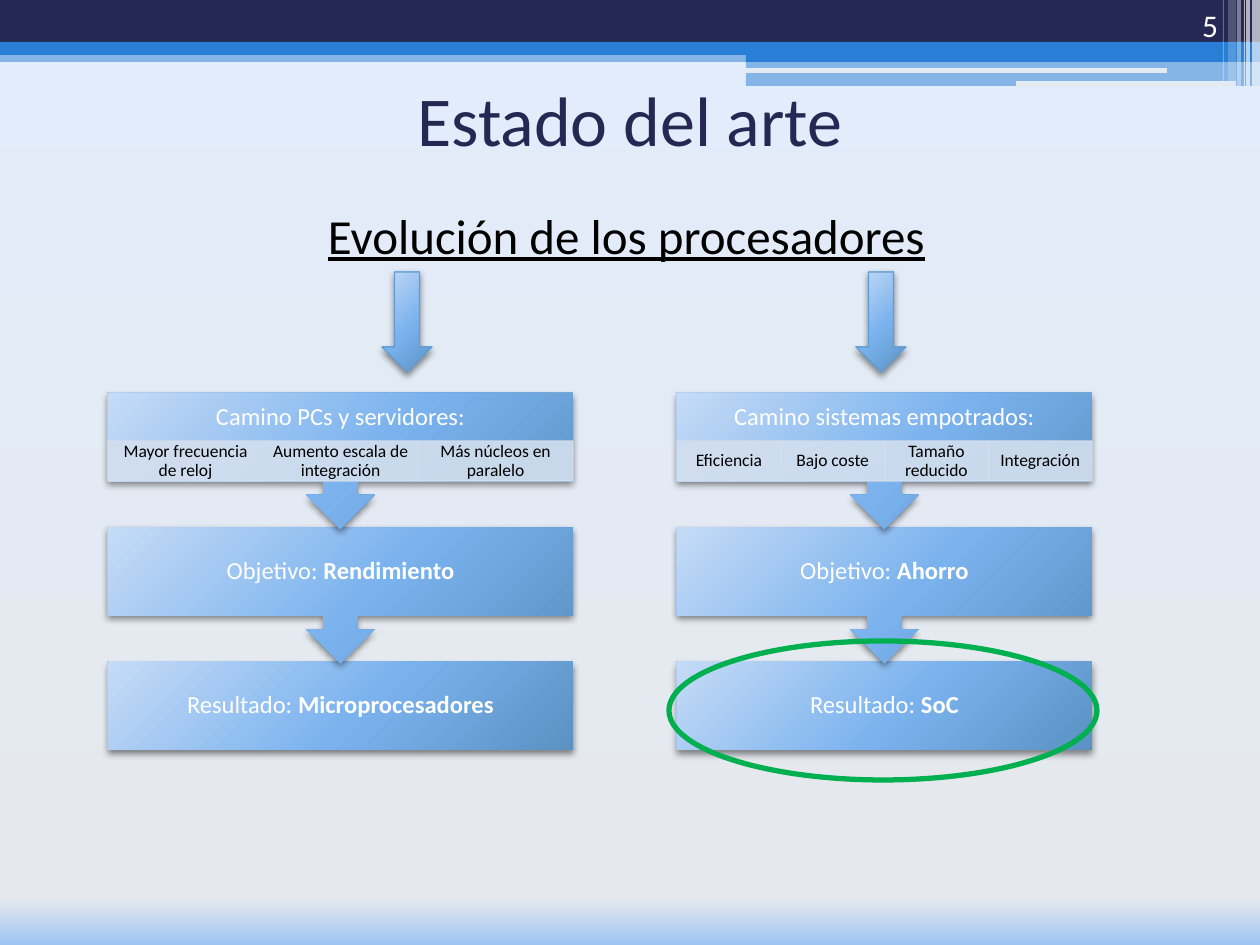
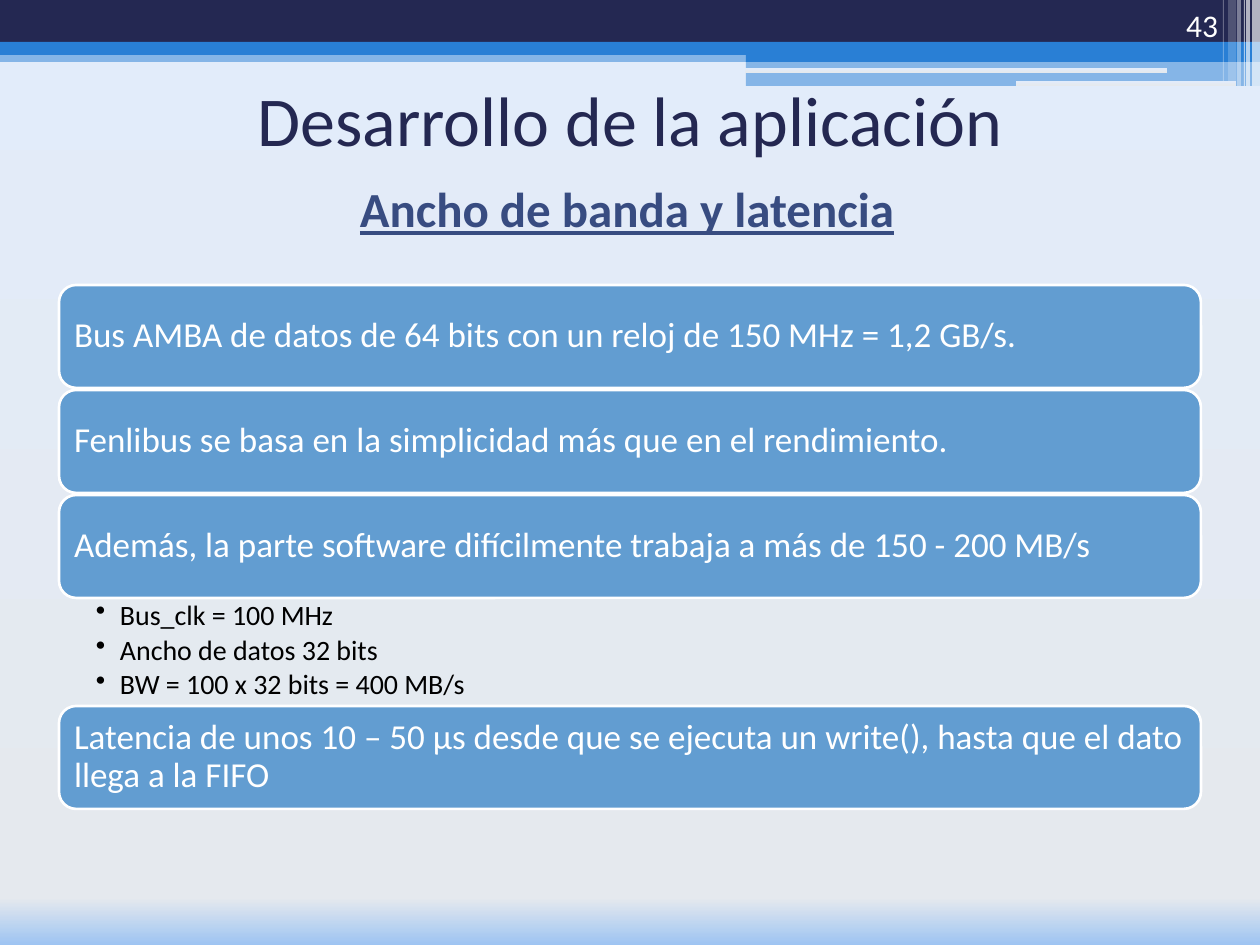
import pptx
import pptx.dml.color
import pptx.enum.shapes
import pptx.enum.text
import pptx.oxml
import pptx.oxml.ns
import pptx.util

RGB = pptx.dml.color.RGBColor
SHAPE = pptx.enum.shapes.MSO_SHAPE
ALIGN = pptx.enum.text.PP_ALIGN
ANCHOR = pptx.enum.text.MSO_ANCHOR
qn = pptx.oxml.ns.qn

EMU_PER_PX = 914400 / 126
SLIDE_W, SLIDE_H = 1260, 945
FONT = "Calibri"

NAVY = RGB(0x24, 0x28, 0x52)
BLUE = RGB(0x29, 0x7F, 0xD5)
SKY = RGB(0x62, 0x9D, 0xD1)
INDIGO = RGB(0x38, 0x4C, 0x81)
PALE = RGB(0xD3, 0xDF, 0xEE)
GREEN = RGB(0x00, 0xB0, 0x50)
WHITE = RGB(0xFF, 0xFF, 0xFF)
BLACK = RGB(0x00, 0x00, 0x00)

PAGE_STOPS = [(0, RGB(0x9E, 0xC4, 0xF2)), (5, RGB(0xE5, 0xE9, 0xEE)),
              (100, RGB(0xE2, 0xEC, 0xFA))]
PAGE_SHADE = '<a:lin ang="16200000" scaled="0"/>'
GLOSS_STOPS = [(0, RGB(0xC5, 0xDB, 0xF6)), (55, RGB(0x7A, 0xB2, 0xEE)),
               (100, RGB(0x5B, 0x92, 0xC3))]
GLOSS_SHADE = ('<a:path path="circle"><a:fillToRect l="-40000" t="-90000" '
               'r="140000" b="190000"/></a:path>')


def px(n):
    return pptx.util.Emu(round(n * EMU_PER_PX))


def xml(tag, body):
    return pptx.oxml.parse_xml(f'<a:{tag} {pptx.oxml.ns.nsdecls("a")}>{body}</a:{tag}>')


def set_gradient(parent, stops, shade):
    """Replace the solid fill held by parent with a gradient."""
    marks = "".join(f'<a:gs pos="{pos * 1000}"><a:srgbClr val="{color}"/></a:gs>'
                    for pos, color in stops)
    grad = xml("gradFill", f"<a:gsLst>{marks}</a:gsLst>{shade}")
    parent.replace(parent.find(qn("a:solidFill")), grad)


def set_alpha(parent, percent):
    color = parent.find(qn("a:solidFill")).find(qn("a:srgbClr"))
    color.append(xml("alpha", ""))
    color[-1].set("val", str(percent * 1000))


def add_shape(slide, kind, box, fill=None, alpha=None, line=None, line_pt=0.75):
    sp = slide.shapes.add_shape(kind, *map(px, box))
    sp.shadow.inherit = False
    if fill is None:
        sp.fill.background()
    else:
        sp.fill.solid()
        sp.fill.fore_color.rgb = fill
        if alpha:
            set_alpha(sp.element.spPr, alpha)
    if line is None:
        sp.line.fill.background()
    else:
        sp.line.color.rgb = line
        sp.line.width = pptx.util.Pt(line_pt)
        if alpha:
            set_alpha(sp.element.spPr.find(qn("a:ln")), alpha)
    return sp


def add_glossy(slide, kind, box, line=None):
    """Add a shape with the shaded blue fill and a soft drop shadow."""
    sp = add_shape(slide, kind, box, SKY, line=line)
    set_gradient(sp.element.spPr, GLOSS_STOPS, GLOSS_SHADE)
    sp.element.spPr.find(qn("a:effectLst")).append(xml(
        "outerShdw", '<a:srgbClr val="000000"><a:alpha val="45000"/></a:srgbClr>'))
    shadow = sp.element.spPr.find(qn("a:effectLst"))[0]
    for name, value in (("blurRad", 50800), ("dist", 25400), ("dir", 5400000)):
        shadow.set(name, str(value))
    return sp


def write(sp, *lines, size, color, align=ALIGN.LEFT, anchor=ANCHOR.TOP, bold=False,
          underline=False, bold_tail="", insets=(13, 6, 13, 6), wrap=True,
          spacing=1.0, after=0, bullet_indent=0):
    """Write one paragraph per line; bold_tail ends each in bold."""
    tf = sp.text_frame
    tf.word_wrap = wrap
    tf.vertical_anchor = anchor
    tf.margin_left, tf.margin_top, tf.margin_right, tf.margin_bottom = map(px, insets)
    for i, line in enumerate(lines):
        p = tf.add_paragraph() if i else tf.paragraphs[0]
        p.alignment = align
        p.line_spacing = spacing
        p.space_after = pptx.util.Pt(after)
        if bullet_indent:
            p.level = 1
            pPr = p._p.get_or_add_pPr()
            pPr.set("marL", str(px(bullet_indent)))
            pPr.set("indent", str(px(-bullet_indent)))
            pPr.append(xml("buChar", ""))
            pPr[-1].set("char", "•")
        for text, is_bold in ((line, bold), (bold_tail, True)):
            if text:
                r = p.add_run()
                r.text = text
                r.font.name = FONT
                r.font.size = pptx.util.Pt(size)
                r.font.color.rgb = color
                r.font.bold = is_bold
                r.font.underline = underline


def add_text(slide, box, *lines, **style):
    write(slide.shapes.add_textbox(*map(px, box)), *lines, **style)


def add_header_bands(slide):
    bands = [((0, 50, SLIDE_W, 12), BLUE, 50),
             ((0, 0, SLIDE_W, 43), NAVY, None),
             ((0, 42, SLIDE_W, 13), BLUE, None),
             ((746, 49, 514, 13), BLUE, None),
             ((746, 61, 514, 25), BLUE, 50)]
    for box, color, alpha in bands:
        add_shape(slide, SHAPE.RECTANGLE, box, color, alpha)
    for box in ((745, 68, 422, 5), (1016, 81, 220, 5)):
        sp = add_shape(slide, SHAPE.ROUNDED_RECTANGLE, box, PALE)
        set_gradient(sp.element.spPr, PAGE_STOPS, PAGE_SHADE)
    stripes = [(1252, 8, 86, 65), (1246, 4, 86, 65), (1244, 1, 86, 60),
               (1237, 4, 86, 40), (1228, 8, 81, 20), (1223, 1, 81, 30)]
    for x, w, h, alpha in stripes:
        add_shape(slide, SHAPE.RECTANGLE, (x, 0, w, h), WHITE, alpha)


def add_base_slide(prs, title, number):
    slide = prs.slides.add_slide(prs.slide_layouts[6])
    slide.background.fill.solid()
    slide.background.fill.fore_color.rgb = PALE
    set_gradient(slide.element.xpath(".//p:bgPr")[0], PAGE_STOPS, PAGE_SHADE)
    add_header_bands(slide)
    add_text(slide, (63, 45, 1134, 147), title, size=40, color=NAVY,
             align=ALIGN.CENTER, anchor=ANCHOR.MIDDLE)
    add_text(slide, (1126, 0, 105, 50), number, size=18, color=WHITE,
             align=ALIGN.RIGHT, anchor=ANCHOR.BOTTOM)
    return slide


def add_path_column(slide, box, heading, features, goal, result):
    """Draw three stacked steps, from the heading with its features to the result."""
    x, y, w, h = box
    body_h, callout_h, feature_h = 88, 136, 40
    pitch = (h - body_h) / 2
    steps = [(heading, "", feature_h), ("Objetivo: ", goal, 0), ("Resultado: ", result, 0)]
    for i, (text, tail, reserved) in reversed(list(enumerate(steps))):
        last = i == len(steps) - 1
        kind = SHAPE.RECTANGLE if last else SHAPE.DOWN_ARROW_CALLOUT
        sp = add_glossy(slide, kind, (x, y + i * pitch, w, body_h if last else callout_h))
        write(sp, text, bold_tail=tail, size=14, color=WHITE, align=ALIGN.CENTER,
              anchor=ANCHOR.MIDDLE, spacing=0.9, insets=(14, 14, 14, 14 + reserved))
    feature_w = w / len(features)
    for i, feature in enumerate(features):
        sp = add_shape(slide, SHAPE.RECTANGLE,
                       (x + i * feature_w, y + body_h - feature_h, feature_w, feature_h),
                       PALE, 90, line=PALE)
        write(sp, feature, size=10, color=BLACK, align=ALIGN.CENTER,
              anchor=ANCHOR.MIDDLE, spacing=0.9, insets=(10, 1, 10, 1))


def add_evolution_slide(prs):
    slide = add_base_slide(prs, "Estado del arte", "5")
    add_text(slide, (315, 199, 629, 72), "Evolución de los procesadores",
             size=28, color=BLACK, underline=True, wrap=False)
    for x in (382, 856):
        add_glossy(slide, SHAPE.DOWN_ARROW, (x, 272, 50, 100), line=SKY)
    add_path_column(slide, (108, 393, 465, 357), "Camino PCs y servidores:",
                    ["Mayor frecuencia de reloj", "Aumento escala de integración",
                     "Más núcleos en paralelo"], "Rendimiento", "Microprocesadores")
    add_path_column(slide, (677, 393, 415, 357), "Camino sistemas empotrados:",
                    ["Eficiencia", "Bajo coste", "Tamaño reducido", "Integración"],
                    "Ahorro", "SoC")
    add_shape(slide, SHAPE.OVAL, (669, 641, 428, 139), line=GREEN, line_pt=3)


def add_card_stack(slide, box, cards):
    """Stack cards downwards; each card may have bullets beneath it."""
    x, y, w, card_h = box
    gap, bullets_h = 2, 108
    for text, bullets in cards:
        sp = add_shape(slide, SHAPE.ROUNDED_RECTANGLE, (x, y, w, card_h), SKY,
                       line=WHITE, line_pt=1.5)
        write(sp, text, size=20, color=WHITE, anchor=ANCHOR.MIDDLE, spacing=0.9,
              insets=(10, 10, 10, 10))
        y += card_h
        if bullets:
            add_text(slide, (x, y, w, bullets_h), *bullets, size=16, color=BLACK,
                     spacing=0.9, after=2.7, insets=(37, 3, 15, 3), bullet_indent=24)
            y += bullets_h
        else:
            y += gap


def add_bandwidth_slide(prs):
    slide = add_base_slide(prs, "Desarrollo de la aplicación", "43")
    add_text(slide, (347, 173, 566, 72), "Ancho de banda y latencia", size=28,
             color=INDIGO, bold=True, underline=True, wrap=False)
    add_card_stack(slide, (59, 285, 1142, 103), [
        ("Bus AMBA de datos de 64 bits con un reloj de 150 MHz = 1,2 GB/s.", []),
        ("Fenlibus se basa en la simplicidad más que en el rendimiento.", []),
        ("Además, la parte software difícilmente trabaja a más de 150 - 200 MB/s",
         ["Bus_clk = 100 MHz", "Ancho de datos 32 bits", "BW = 100 x 32 bits = 400 MB/s"]),
        ("Latencia de unos 10 – 50 µs desde que se ejecuta un write(), "
         "hasta que el dato llega a la FIFO", []),
    ])


def main():
    prs = pptx.Presentation()
    prs.slide_width, prs.slide_height = px(SLIDE_W), px(SLIDE_H)
    add_evolution_slide(prs)
    add_bandwidth_slide(prs)
    prs.save("out.pptx")


if __name__ == "__main__":
    main()
